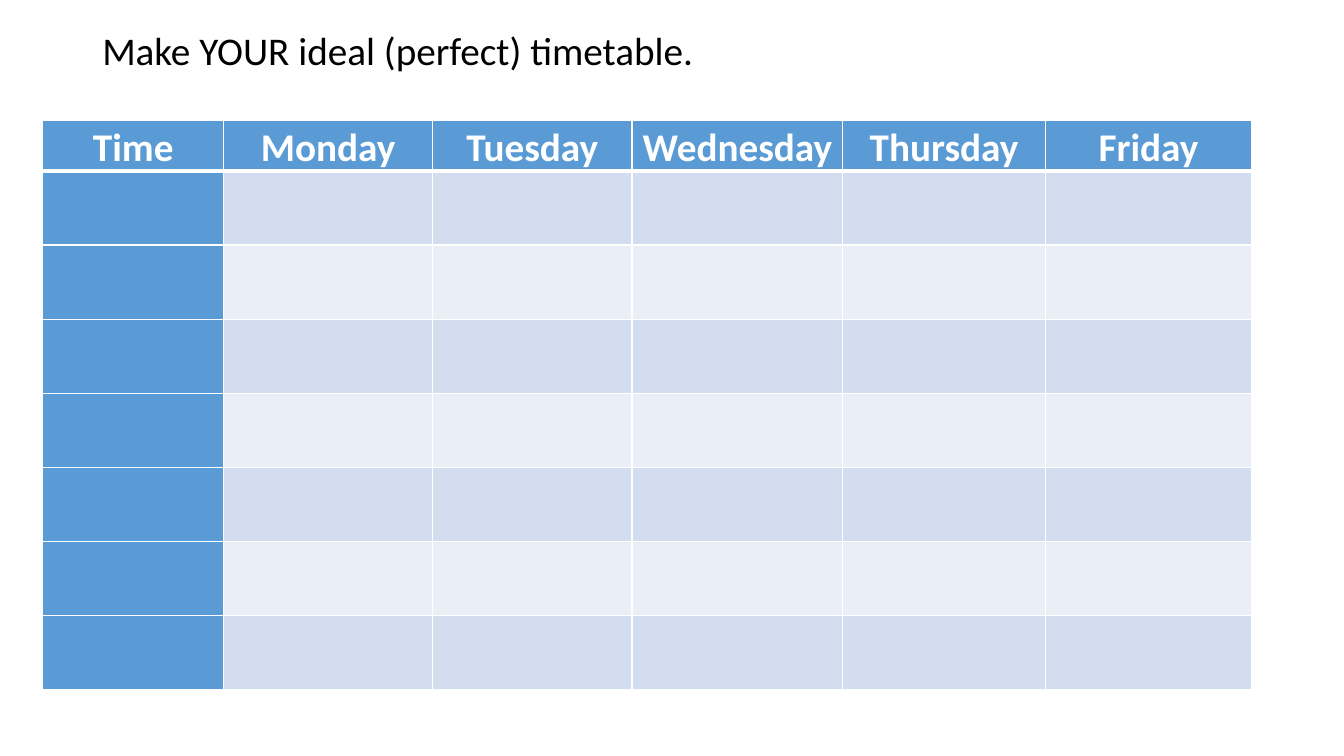
import pptx
import pptx.dml.color
import pptx.enum.text
import pptx.oxml.ns
import pptx.util
from lxml import etree

Pt = pptx.util.Pt
RGBColor = pptx.dml.color.RGBColor
ALIGN = pptx.enum.text.PP_ALIGN

INSTRUCTION = "Make YOUR ideal (perfect) timetable. "
HEADINGS = ["Time", "Monday", "Tuesday", "Wednesday", "Thursday", "Friday"]
COLUMN_WIDTHS = [129.4, 149, 142.6, 150.5, 144.7, 147.6]
LESSON_ROWS = 7
HEADING_HEIGHT, LESSON_HEIGHT = 26.6, 53
TIMETABLE_LEFT, TIMETABLE_TOP, TIMETABLE_HEIGHT = 30.5, 86, 407.5

FONT, TEXT_SIZE = "Calibri", 28
BLACK = RGBColor(0x00, 0x00, 0x00)
WHITE = RGBColor(0xFF, 0xFF, 0xFF)
BLUE = RGBColor(0x5B, 0x9B, 0xD5)
BANDS = [RGBColor(0xD2, 0xDE, 0xEF), RGBColor(0xEA, 0xEF, 0xF7)]


def write(paragraph, text, color, bold, alignment, spacing):
    paragraph.alignment = alignment
    paragraph.line_spacing = spacing
    run = paragraph.add_run()
    run.text = text
    run.font.name = FONT
    run.font.size = Pt(TEXT_SIZE)
    run.font.bold = bold
    run.font.color.rgb = color


def add_borders(cell, widths):
    """Draw white cell borders; widths maps each side (L, R, T, B) to points."""
    properties = cell._tc.get_or_add_tcPr()
    qn = pptx.oxml.ns.qn
    for side in "LRTB":
        line = etree.SubElement(properties, qn("a:ln" + side), w=str(Pt(widths[side])))
        fill = etree.SubElement(line, qn("a:solidFill"))
        etree.SubElement(fill, qn("a:srgbClr"), val=str(WHITE))


def add_instruction(slide):
    box = slide.shapes.add_textbox(Pt(66), Pt(19.4), Pt(828), Pt(467.3))
    box.text_frame.word_wrap = True
    write(box.text_frame.paragraphs[0], INSTRUCTION, BLACK, False, ALIGN.JUSTIFY, 0.9)


def add_timetable(slide):
    frame = slide.shapes.add_table(
        LESSON_ROWS + 1, len(HEADINGS), Pt(TIMETABLE_LEFT), Pt(TIMETABLE_TOP),
        Pt(sum(COLUMN_WIDTHS)), Pt(TIMETABLE_HEIGHT))
    timetable = frame.table
    for column, width in zip(timetable.columns, COLUMN_WIDTHS):
        column.width = Pt(width)
    for r, row in enumerate(timetable.rows):
        row.height = Pt(LESSON_HEIGHT if r else HEADING_HEIGHT)
        for c, cell in enumerate(row.cells):
            cell.margin_left = cell.margin_right = Pt(5)
            cell.margin_top = cell.margin_bottom = 0
            add_borders(cell, {"L": 1, "R": 1, "T": 3 if r == 1 else 1, "B": 1 if r else 3})
            cell.fill.solid()
            cell.fill.fore_color.rgb = BANDS[(r - 1) % 2] if r and c else BLUE
            if r == 0:
                write(cell.text_frame.paragraphs[0], HEADINGS[c], WHITE, True, ALIGN.CENTER, 1.07)
    frame.height = Pt(TIMETABLE_HEIGHT)


def main():
    deck = pptx.Presentation()
    deck.slide_width, deck.slide_height = Pt(960), Pt(540)
    slide = deck.slides.add_slide(deck.slide_layouts[6])
    add_instruction(slide)
    add_timetable(slide)
    deck.save("out.pptx")


if __name__ == "__main__":
    main()
